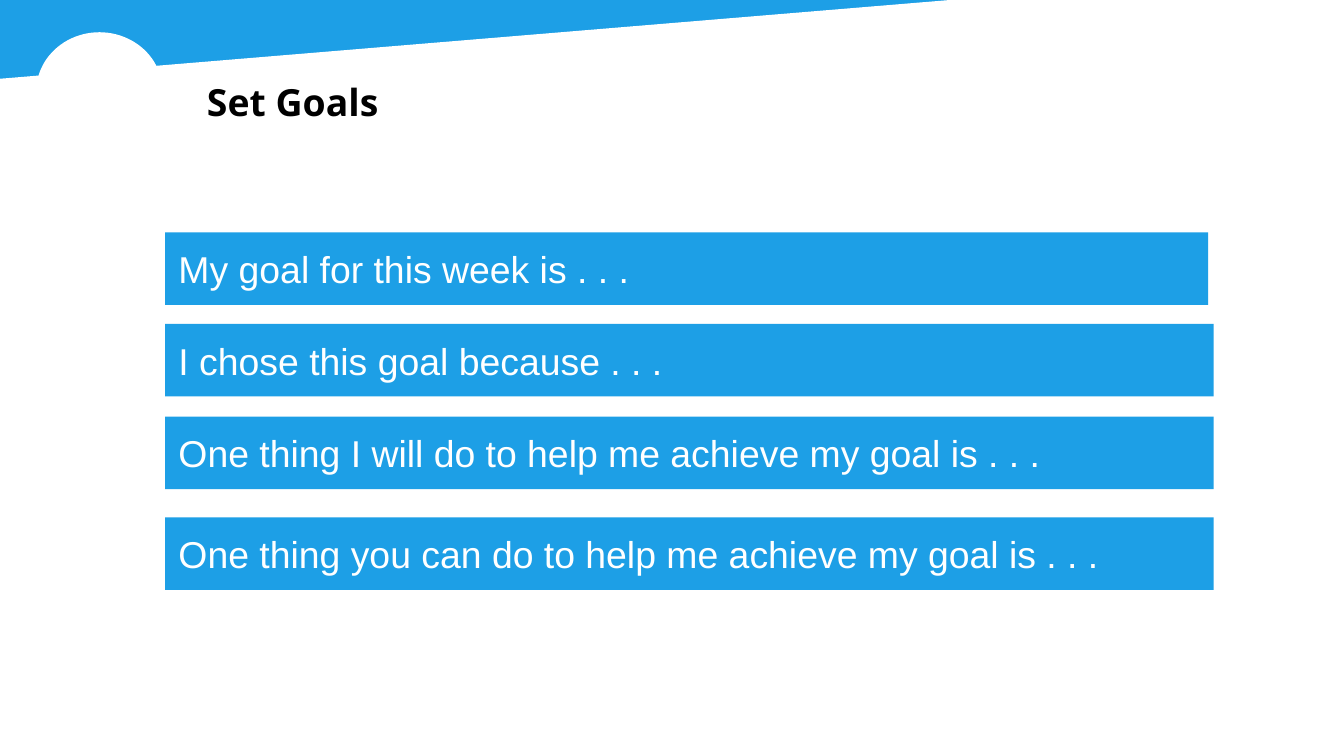
from pptx import Presentation
from pptx.dml.color import RGBColor
from pptx.enum import shapes, text
from pptx.util import Inches, Pt

COLORS = {"blue": "1D9FE6", "white": "FFFFFF", "black": "000000"}
TITLE = "Set Goals"
PROMPTS = [
    ("My goal for this week is . . .", 1.73, 7.76),
    ("I chose this goal because . . .", 2.41, 7.8),
    ("One thing I will do to help me achieve my goal is . . .", 3.1, 7.8),
    ("One thing you can do to help me achieve my goal is . . .", 3.85, 7.8),
]
PANEL_HUNDREDTHS = [(1001, -23), (0, 60), (-1, 567), (1003, 568)]
BAR_LEFT, BAR_HEIGHT = 1.23, 0.54
TITLE_FONT = {"name": "Open Sans", "size": Pt(20), "bold": True}
PROMPT_FONT = {"name": "Arial", "size": Pt(20), "bold": False}


def color(name):
    return RGBColor.from_string(COLORS[name])


def paint(shape, fill):
    shape.shadow.inherit = False
    shape.fill.solid()
    shape.fill.fore_color.rgb = color(fill)
    shape.line.fill.background()


def write(shape, content, font, font_color, anchor):
    frame = shape.text_frame
    frame.text = content
    frame_format = {
        "word_wrap": True,
        "vertical_anchor": anchor,
        "auto_size": text.MSO_AUTO_SIZE.SHAPE_TO_FIT_TEXT,
    }
    for side in ("left", "top", "right", "bottom"):
        frame_format[f"margin_{side}"] = Inches(0.1)
    for name, value in frame_format.items():
        setattr(frame, name, value)
    paragraph = frame.paragraphs[0]
    paragraph.alignment = text.PP_ALIGN.LEFT
    paragraph.space_before = Pt(0)
    for name, value in font.items():
        setattr(paragraph.font, name, value)
    paragraph.font.color.rgb = color(font_color)
    return paragraph


def main():
    presentation = Presentation()
    presentation.slide_width = Inches(10)
    presentation.slide_height = Inches(10) * 9 // 16
    slide = presentation.slides.add_slide(presentation.slide_layouts[5])
    slide.background.fill.solid()
    slide.background.fill.fore_color.rgb = color("blue")

    builder = slide.shapes.build_freeform(
        *PANEL_HUNDREDTHS[0], scale=Inches(0.01))
    builder.add_line_segments(PANEL_HUNDREDTHS[1:], close=True)
    panel = builder.convert_to_shape()
    paint(panel, "white")
    panel.line.color.rgb = color("white")
    panel.line.width = Pt(2)

    badge = slide.shapes.add_shape(
        shapes.MSO_SHAPE.OVAL, *map(Inches, (0.27, 0.24, 0.94, 0.88)))
    paint(badge, "white")

    title = slide.shapes.title
    slide.shapes._spTree.append(title._element)
    title.left, title.top, title.width, title.height = map(
        Inches, (1.44, 0.44, 2.3, 0.54))
    heading = write(title, TITLE, TITLE_FONT, "black", text.MSO_ANCHOR.TOP)
    heading.line_spacing = 1.15

    for prompt, top, width in PROMPTS:
        bar = slide.shapes.add_shape(
            shapes.MSO_SHAPE.RECTANGLE,
            *map(Inches, (BAR_LEFT, top, width, BAR_HEIGHT)))
        paint(bar, "blue")
        write(bar, prompt, PROMPT_FONT, "white", text.MSO_ANCHOR.MIDDLE)

    presentation.save("out.pptx")


if __name__ == "__main__":
    main()
